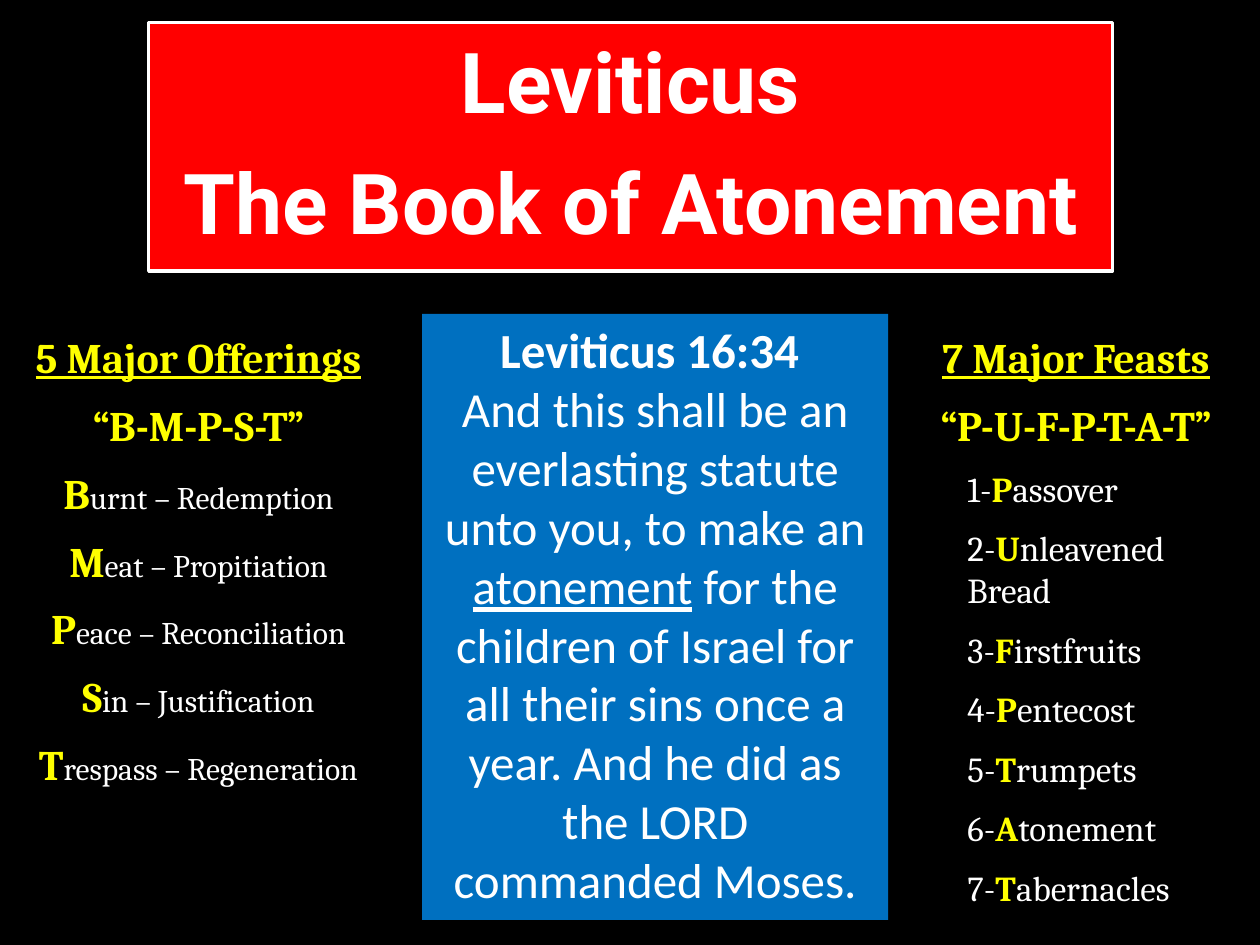
from pptx import Presentation
from pptx.dml.color import RGBColor
from pptx.enum.shapes import MSO_SHAPE as Shape
from pptx.enum.text import MSO_ANCHOR as Anchor, PP_ALIGN as Align
from pptx.util import Inches, Pt

BLACK, WHITE, YELLOW = "000000", "FFFFFF", "FFFF00"
RED, BLUE = "FF0000", "0070C0"

OFFERINGS = ["Burnt – Redemption", "Meat – Propitiation", "Peace – Reconciliation",
             "Sin – Justification", "Trespass – Regeneration"]
FEASTS = ["Passover", "Unleavened Bread", "Firstfruits", "Pentecost",
          "Trumpets", "Atonement", "Tabernacles"]


def color(hex_code):
    return RGBColor.from_string(hex_code)


def add_panel(slide, box, fill=None, line=None, line_width=0.75):
    panel = slide.shapes.add_shape(Shape.RECTANGLE, *map(Inches, box))
    panel.shadow.inherit = False
    if fill:
        panel.fill.solid()
        panel.fill.fore_color.rgb = color(fill)
    else:
        panel.fill.background()
    if line:
        panel.line.color.rgb = color(line)
        panel.line.width = Pt(line_width)
    else:
        panel.line.fill.background()
    return panel.text_frame


def add_paragraph(frame, align=Align.CENTER, after=0):
    """Return the empty first paragraph, or a new one below the others."""
    first = frame.paragraphs[0]
    paragraph = frame.add_paragraph() if first.runs else first
    paragraph.alignment = align
    paragraph.space_after = Pt(after)
    return paragraph


def add_run(paragraph, text, font, size, hex_code, bold=False, underline=False):
    run = paragraph.add_run()
    run.text = text
    run.font.name = font
    run.font.size = Pt(size)
    run.font.color.rgb = color(hex_code)
    run.font.bold = bold
    run.font.underline = underline


def add_title(slide, box):
    frame = add_panel(slide, box, RED, WHITE, 2)
    frame.word_wrap = True
    frame.vertical_anchor = Anchor.MIDDLE
    frame.margin_left = frame.margin_right = Inches(0.2)
    frame.margin_top = frame.margin_bottom = Inches(0.2)
    for text in ("Leviticus", "The Book of Atonement"):
        paragraph = add_paragraph(frame, after=17)
        paragraph.line_spacing = 0.9
        add_run(paragraph, text, "Roboto", 48, WHITE, bold=True)


def add_verse(slide, box):
    frame = add_panel(slide, box, BLUE)
    frame.word_wrap = True
    frame.vertical_anchor = Anchor.TOP
    add_run(add_paragraph(frame), "Leviticus 16:34 ", "Calibri", 28, WHITE, bold=True)
    verse = add_paragraph(frame)
    add_run(verse, "And this shall be an everlasting statute unto you, to make an ",
            "Calibri", 28, WHITE)
    add_run(verse, "atonement", "Calibri", 28, WHITE, underline=True)
    add_run(verse, " for the children of Israel for all their sins once a year. "
            "And he did as the LORD commanded Moses.", "Calibri", 28, WHITE)


def add_list_heading(frame, heading, acronym):
    frame.word_wrap = True
    frame.vertical_anchor = Anchor.TOP
    for text, underline in ((heading, True), (acronym, False)):
        add_run(add_paragraph(frame, after=10), text, "Cambria", 24, YELLOW, True, underline)


def add_offerings(slide, box):
    frame = add_panel(slide, box, line=BLACK)
    add_list_heading(frame, "5 Major Offerings", "“B-M-P-S-T”")
    for offering in OFFERINGS:
        paragraph = add_paragraph(frame, after=10)
        add_run(paragraph, offering[0], "Cambria", 24, YELLOW, bold=True)
        add_run(paragraph, offering[1:], "Cambria", 18, WHITE)


def add_feasts(slide, box):
    frame = slide.shapes.add_textbox(*map(Inches, box)).text_frame
    add_list_heading(frame, "7 Major Feasts", "“P-U-F-P-T-A-T”")
    for number, feast in enumerate(FEASTS, 1):
        paragraph = add_paragraph(frame, Align.LEFT, after=10)
        paragraph.level = 1
        properties = paragraph._p.get_or_add_pPr()
        properties.set("marL", str(Inches(0.5)))
        properties.set("indent", "0")
        add_run(paragraph, f"{number}-", "Cambria", 20, WHITE)
        add_run(paragraph, feast[0], "Cambria", 20, YELLOW, bold=True)
        add_run(paragraph, feast[1:], "Cambria", 20, WHITE)


def main():
    deck = Presentation()
    deck.slide_width, deck.slide_height = Inches(10), Inches(7.5)
    slide = deck.slides.add_slide(deck.slide_layouts[6])
    slide.background.fill.solid()
    slide.background.fill.fore_color.rgb = color(BLACK)

    # Title banner, then the verse between the two lists
    add_title(slide, (1.18, 0.18, 7.65, 1.97))
    add_verse(slide, (3.35, 2.49, 3.7, 4.81))
    add_offerings(slide, (0.07, 2.58, 3.01, 3.75))
    add_feasts(slide, (7.08, 2.58, 2.92, 4.72))
    deck.save("out.pptx")


if __name__ == "__main__":
    main()
